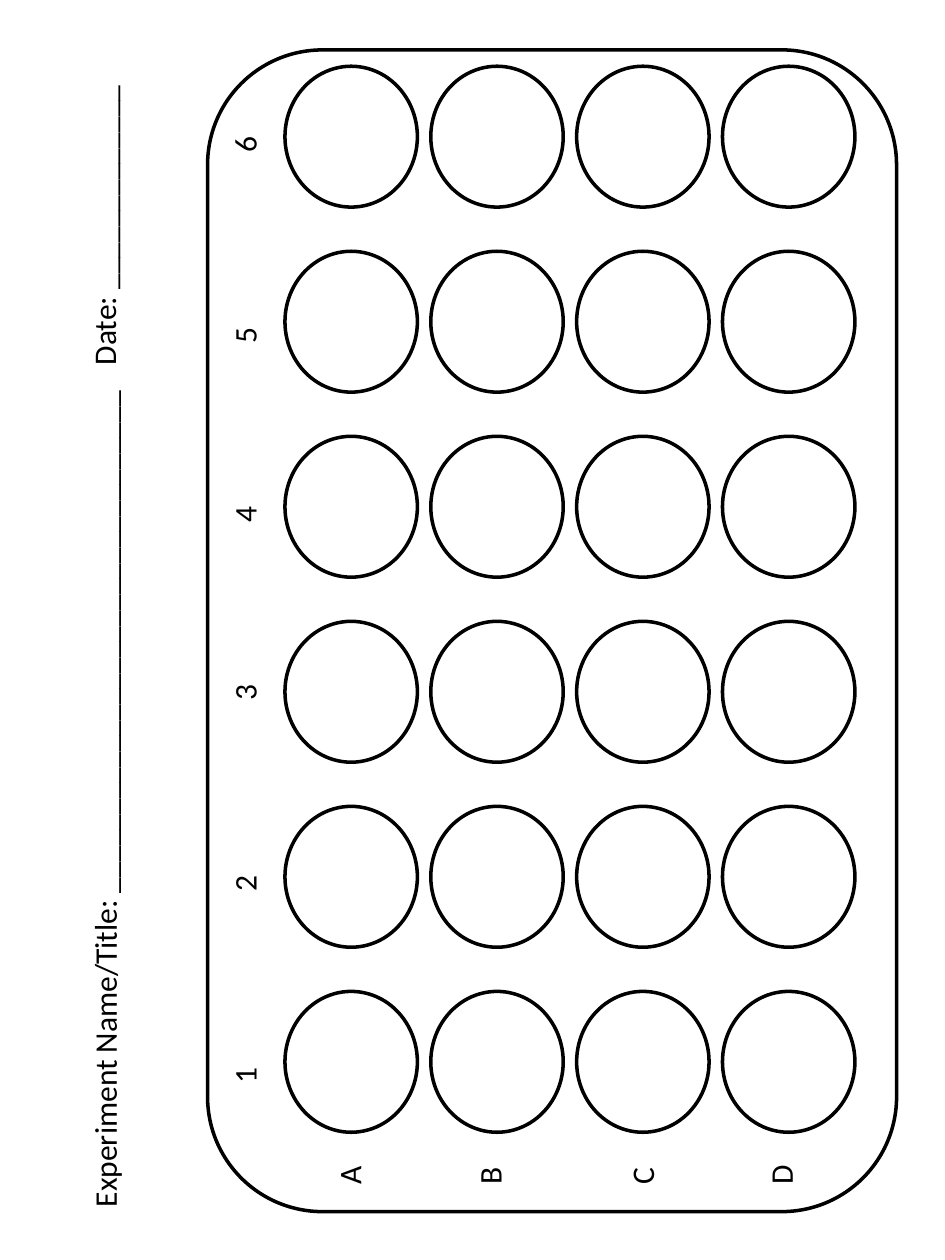
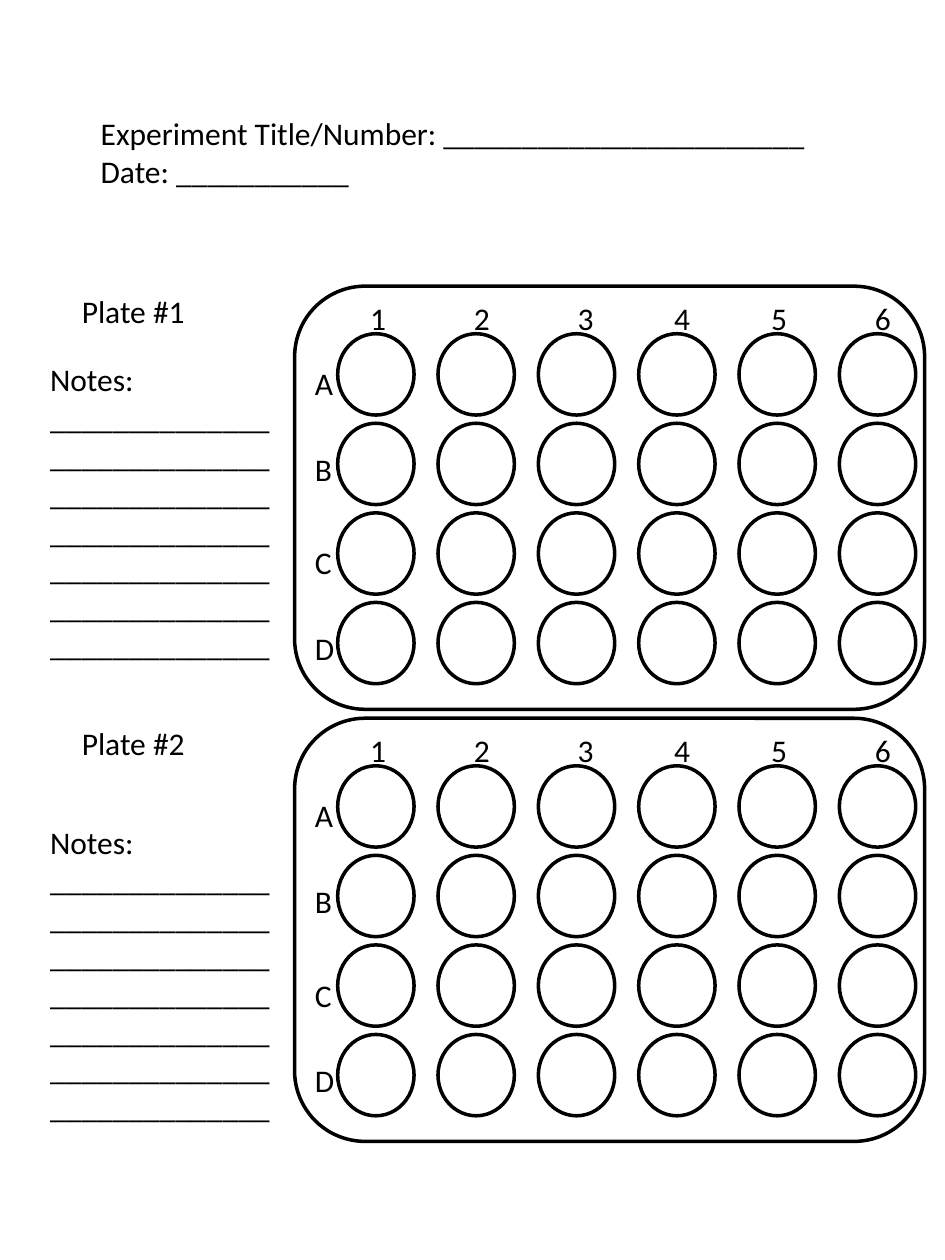
from pptx import Presentation
from pptx.dml.color import RGBColor
from pptx.enum.shapes import MSO_SHAPE as Preset
from pptx.enum.text import MSO_AUTO_SIZE as AutoSize
from pptx.util import Cm, Pt

COLORS = {"paper": "FFFFFF", "ink": "000000"}
FONT, FONT_SIZE = "Calibri", Pt(18)
LINE_WIDTH = Pt(2)
TURNED = 270

# Full-size well plate in centimetres, measured from its top left corner
PLATE_SIZE = (23.42, 13.89)
WELL_START = (1.6, 1.56)
WELL_PITCH = (3.73, 2.94)
WELL_SIZE = (2.84, 2.67)
LABEL_SIZE = (1.09, 1.22)
COLUMN_LABEL_TOP = 0.23
COLUMN_LABEL_LEFTS = {"1": 2.34, "2": 6.2, "3": 10.06,
                      "4": 13.64, "5": 17.25, "6": 21.11}
ROW_LABEL_LEFT = 0.29
ROW_LABEL_TOPS = {"A": 2.34, "B": 5.17, "C": 8.24, "D": 11.04}

NOTE_LINES = 7


def color(name):
    return RGBColor.from_string(COLORS[name])


def add_outline(shapes, preset, box):
    shape = shapes.add_shape(preset, *map(Cm, box))
    shape.shadow.inherit = False
    shape.fill.solid()
    shape.fill.fore_color.rgb = color("paper")
    shape.line.color.rgb = color("ink")
    shape.line.width = LINE_WIDTH


def add_text(shapes, box, *lines, rotation=0):
    text_box = shapes.add_textbox(*map(Cm, box))
    text_box.rotation = rotation
    frame = text_box.text_frame
    frame.text = "\n".join(lines)
    frame.word_wrap = False
    frame.auto_size = AutoSize.SHAPE_TO_FIT_TEXT
    for paragraph in frame.paragraphs:
        paragraph.font.name = FONT
        paragraph.font.size = FONT_SIZE
        paragraph.font.color.rgb = color("ink")


def add_well_plate(slide, box, rotation=0):
    """Scale the full-size plate into the box, then turn it as one group."""
    left, top, width, height = box
    scale_x, scale_y = width / PLATE_SIZE[0], height / PLATE_SIZE[1]
    group = slide.shapes.add_group_shape()
    shapes = group.shapes

    def place(x, y, size):
        return (left + x * scale_x, top + y * scale_y,
                size[0] * scale_x, size[1] * scale_y)

    add_outline(shapes, Preset.ROUNDED_RECTANGLE, box)
    for row in range(len(ROW_LABEL_TOPS)):
        for column in range(len(COLUMN_LABEL_LEFTS)):
            x = WELL_START[0] + column * WELL_PITCH[0]
            y = WELL_START[1] + row * WELL_PITCH[1]
            add_outline(shapes, Preset.OVAL, place(x, y, WELL_SIZE))
    for label, y in ROW_LABEL_TOPS.items():
        add_text(shapes, place(ROW_LABEL_LEFT, y, LABEL_SIZE), label)
    for label, x in COLUMN_LABEL_LEFTS.items():
        add_text(shapes, place(x, COLUMN_LABEL_TOP, LABEL_SIZE), label)
    group.rotation = rotation


def add_plate_notes(slide, box, title, notes_offset):
    left, top, width, height = box
    add_text(slide.shapes, (left + 0.64, top, 2.62, 1.02), title)
    add_text(slide.shapes, (left, top + notes_offset, width, height),
             "Notes:", *["_" * 14] * NOTE_LINES)


def add_single_plate_slide(presentation, blank):
    slide = presentation.slides.add_slide(blank)
    add_well_plate(slide, (-0.58, 5.77, *PLATE_SIZE), TURNED)
    add_text(slide.shapes, (-6.48, 15.49, 17.17, 1.02),
             "Experiment Name/Title: " + "_" * 32, rotation=TURNED)
    add_text(slide.shapes, (-1.02, 3.99, 6.22, 1.02),
             "Date: " + "_" * 13, rotation=TURNED)


def add_two_plate_slide(presentation, blank):
    slide = presentation.slides.add_slide(blank)
    plates = (("Plate #1", 5.77, 1.37), ("Plate #2", 14.48, 1.98))
    for _, top, _ in plates:
        add_well_plate(slide, (5.94, top, 12.7, 8.53))
    add_text(slide.shapes, (1.78, 2.18, 14.88, 1.8),
             "Experiment Title/Number: " + "_" * 23, "Date: " + "_" * 11)
    for title, top, notes_offset in plates:
        add_plate_notes(slide, (0.76, top, 5, 6.4), title, notes_offset)


def main():
    presentation = Presentation()
    presentation.slide_width, presentation.slide_height = Cm(19.05), Cm(25.4)
    blank = presentation.slide_layouts[6]
    add_single_plate_slide(presentation, blank)
    add_two_plate_slide(presentation, blank)
    presentation.save("out.pptx")


if __name__ == "__main__":
    main()
